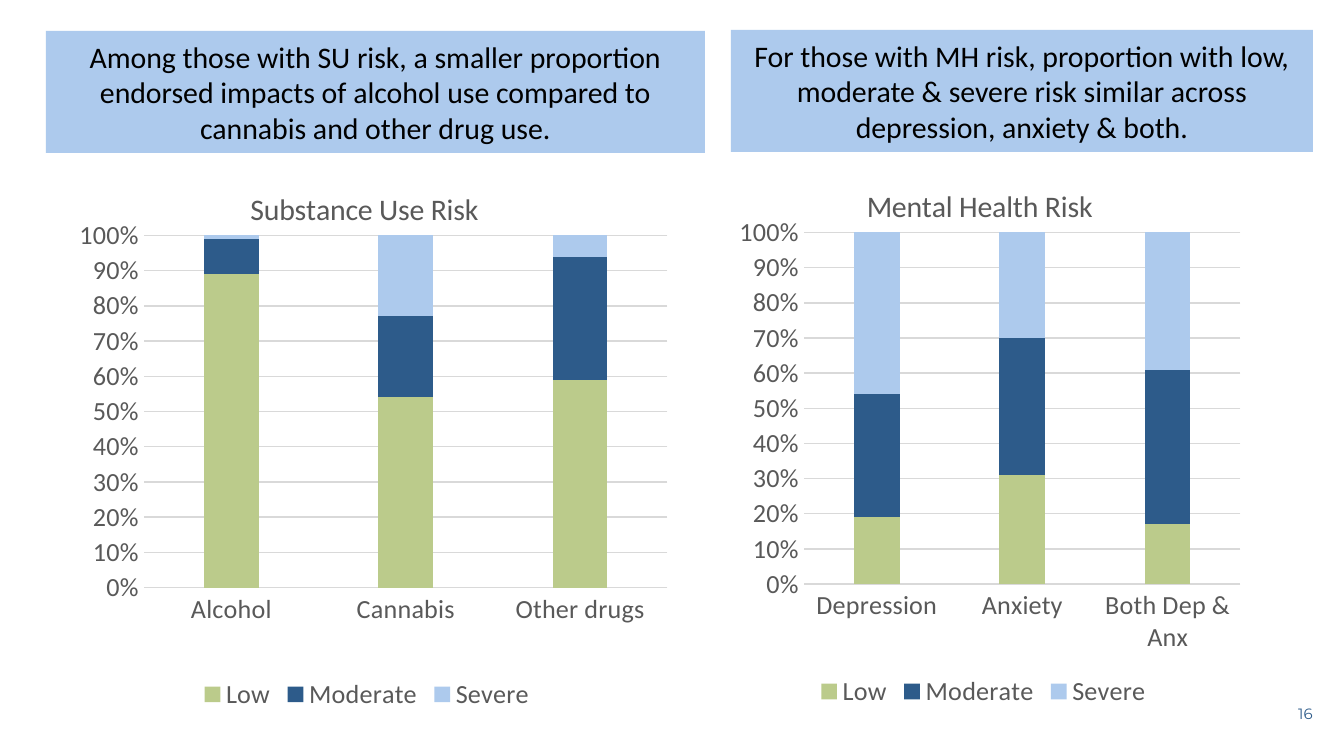
from lxml import etree
from pptx import Presentation
from pptx.chart.data import CategoryChartData
from pptx.dml.color import RGBColor
from pptx.enum.chart import XL_CHART_TYPE, XL_LEGEND_POSITION, XL_TICK_MARK
from pptx.enum.shapes import MSO_SHAPE
from pptx.enum.text import MSO_ANCHOR, PP_ALIGN
from pptx.oxml.ns import qn
from pptx.util import Pt

STACKED = XL_CHART_TYPE.COLUMN_STACKED
BOTTOM = XL_LEGEND_POSITION.BOTTOM
NO_TICK = XL_TICK_MARK.NONE
RECTANGLE = MSO_SHAPE.RECTANGLE
MIDDLE = MSO_ANCHOR.MIDDLE
CENTER, RIGHT = PP_ALIGN.CENTER, PP_ALIGN.RIGHT

SLIDE_SIZE = (1344, 756)
EMU_PER_PX = 9144000 / SLIDE_SIZE[0]
BLUE, LIGHT_BLUE, GREEN = "2D5B8A", "ADCAED", "BBCB8B"
GRAY, GRID, BLACK = "595959", "D9D9D9", "000000"
RISK_LEVELS = [("Low", GREEN), ("Moderate", BLUE), ("Severe", LIGHT_BLUE)]

PANELS = [
    {
        "finding": "Among those with SU risk, a smaller proportion endorsed impacts "
                   "of alcohol use compared to cannabis and other drug use.",
        "finding_box": (46, 31, 659, 122),
        "title": "Substance Use Risk",
        "title_at": {"x": 0.31, "y": 0.05},
        "chart_box": (46, 156, 642, 560),
        "plot": {"x": 0.153, "y": 0.142, "w": 0.815, "h": 0.629},
        "shares": {
            "Alcohol": (0.89, 0.10, 0.01),
            "Cannabis": (0.54, 0.23, 0.23),
            "Other drugs": (0.59, 0.35, 0.06),
        },
    },
    {
        "finding": "For those with MH risk, proportion with low, moderate & severe "
                   "risk similar across depression, anxiety & both.",
        "finding_box": (731, 30, 582, 122),
        "title": "Mental Health Risk",
        "title_at": {"x": 0.28, "y": 0.05},
        "chart_box": (706, 153, 555, 560),
        "plot": {"x": 0.177, "y": 0.142, "w": 0.786, "h": 0.628},
        "shares": {
            "Depression": (0.19, 0.35, 0.46),
            "Anxiety": (0.31, 0.39, 0.30),
            "Both Dep & Anx": (0.17, 0.44, 0.40),
        },
    },
]
PAGE_NUMBER = "16"
PAGE_NUMBER_BOX = (1246, 685, 80, 58)


def px(*lengths):
    return [round(length * EMU_PER_PX) for length in lengths]


def color(hex_code):
    return RGBColor.from_string(hex_code)


def style_font(font, size, hex_code, name="Calibri"):
    font.size = Pt(size)
    font.name = name
    font.bold = False
    font.color.rgb = color(hex_code)


def write(frame, text, align, size, hex_code, name="Calibri"):
    frame.word_wrap = True
    frame.vertical_anchor = MIDDLE
    paragraph = frame.paragraphs[0]
    paragraph.alignment = align
    run = paragraph.add_run()
    run.text = text
    style_font(run.font, size, hex_code, name)


def place(part, index, position, inner=False):
    for old in part.findall(qn("c:layout")):
        part.remove(old)
    layout = etree.Element(qn("c:layout"))
    manual = etree.SubElement(layout, qn("c:manualLayout"))
    settings = {"layoutTarget": "inner"} if inner else {}
    settings |= {"xMode": "edge", "yMode": "edge"} | position
    for tag, value in settings.items():
        etree.SubElement(manual, qn(f"c:{tag}")).set("val", str(value))
    part.insert(index, layout)


def add_finding(slide, panel):
    box = slide.shapes.add_shape(RECTANGLE, *px(*panel["finding_box"]))
    box.shadow.inherit = False
    box.fill.solid()
    box.fill.fore_color.rgb = color(LIGHT_BLUE)
    box.line.fill.background()
    write(box.text_frame, panel["finding"], CENTER, 16, BLACK)


def add_risk_chart(slide, panel):
    data = CategoryChartData(number_format="0%")
    data.categories = list(panel["shares"])
    for (level, _), values in zip(RISK_LEVELS, zip(*panel["shares"].values())):
        data.add_series(level, values)
    chart = slide.shapes.add_chart(STACKED, *px(*panel["chart_box"]), data).chart
    style_font(chart.font, 14, GRAY)

    chart.has_title = True
    title = chart.chart_title
    run = title.text_frame.paragraphs[0].add_run()
    run.text = panel["title"]
    style_font(run.font, 16, GRAY)
    title.include_in_layout = False
    place(chart.element.find(".//" + qn("c:title")), 1, panel["title_at"])
    place(chart.element.find(".//" + qn("c:plotArea")), 0, panel["plot"], inner=True)

    chart.has_legend = True
    chart.legend.position = BOTTOM
    chart.legend.include_in_layout = False
    style_font(chart.legend.font, 14, GRAY)

    shares_axis, category_axis = chart.value_axis, chart.category_axis
    for axis in (shares_axis, category_axis):
        axis.major_tick_mark = axis.minor_tick_mark = NO_TICK
        style_font(axis.tick_labels.font, 14, GRAY)
    shares_axis.minimum_scale, shares_axis.maximum_scale = 0, 1
    shares_axis.major_unit = 0.1
    shares_axis.tick_labels.number_format = "0%"
    shares_axis.tick_labels.number_format_is_linked = False
    shares_axis.format.line.fill.background()
    for line in (shares_axis.major_gridlines.format.line, category_axis.format.line):
        line.color.rgb = color(GRID)
        line.width = Pt(0.75)

    columns = chart.plots[0]
    columns.gap_width, columns.overlap = 219, 100
    columns.vary_by_categories = False
    for series, (_, fill) in zip(columns.series, RISK_LEVELS):
        series.format.fill.solid()
        series.format.fill.fore_color.rgb = color(fill)


def main():
    deck = Presentation()
    deck.slide_width, deck.slide_height = px(*SLIDE_SIZE)
    slide = deck.slides.add_slide(deck.slide_layouts[6])
    page = slide.shapes.add_textbox(*px(*PAGE_NUMBER_BOX))
    write(page.text_frame, PAGE_NUMBER, RIGHT, 8, BLUE, "Montserrat")
    for panel in PANELS:
        add_risk_chart(slide, panel)
    for panel in PANELS:
        add_finding(slide, panel)
    deck.save("out.pptx")


if __name__ == "__main__":
    main()
